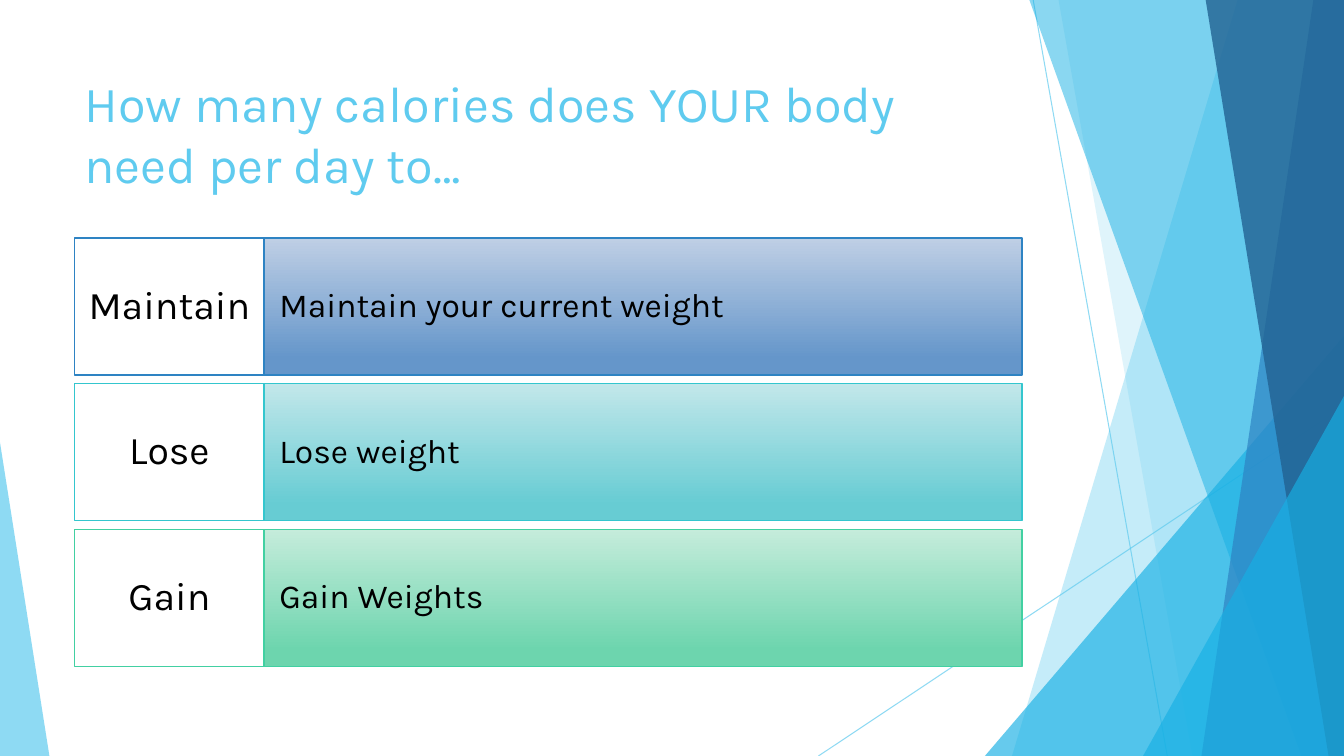
from dataclasses import dataclass
from typing import Any, Optional, Union

from lxml import etree
from pptx import Presentation
from pptx import util as u
from pptx.dml import color
from pptx.enum import shapes, text
from pptx.oxml import ns

WIDTH, HEIGHT = 960, 540
BAND_TOP = -0.6
FONT = "Karla"
SKY, CYAN = "5FCBEF", "17B0E4"

# Table-like block of rows
ROW_TOP, ROW_PITCH, ROW_HEIGHT = 169.9, 104.1, 98
LABEL_LEFT, LABEL_WIDTH, BAR_WIDTH = 53.3, 135.4, 541.4


@dataclass
class Ray:
    start: tuple[float, float]
    end: tuple[float, float]


@dataclass
class Band:
    """Runs from a slanted left edge to the right side of the slide."""
    top_left: float
    bottom_left: float
    fill: str
    opacity: int


@dataclass
class Peak:
    """Right-angled triangle standing on the bottom of the slide."""
    left: float
    width: float
    height: float
    apex: float
    fill: str
    opacity: int


@dataclass
class Goal:
    label: str
    description: str
    line: str
    light: str
    dark: str


RAYS = [Ray((738, 0), (833.8, HEIGHT)), Ray((WIDTH, 290.2), (584.6, HEIGHT))]

FACETS: list[Union[Band, Peak]] = [
    Band(884.2, 722.9, SKY, 36),
    Band(756, 851.8, SKY, 20),
    Peak(703.5, 256.5, 300.2, 1, CYAN, 66),
    Band(735.1, 929.5, CYAN, 50),
    Band(938.2, 858.2, "2E83C3", 70),
    Band(861.1, 949, "226292", 80),
    Peak(816.5, 143.5, 257, 1, CYAN, 66),
    Peak(0, 35.3, 223.9, 0, SKY, 70),
]

GOALS = [
    Goal("Maintain", "Maintain your current weight", "2E83C3", "BFCFE5", "6596CA"),
    Goal("Lose", "Lose weight", "34C6CE", "C2E7EA", "67CCD3"),
    Goal("Gain", "Gain Weights", "42D0A2", "C5ECDB", "6DD5AE"),
]


def rgb(value: str) -> color.RGBColor:
    return color.RGBColor.from_string(value)


def apply(target: Any, values: dict[str, Any]) -> None:
    for name, value in values.items():
        setattr(target, name, value)


def set_opacity(shape: Any, percent: int) -> None:
    for node in shape.element.spPr.iter(ns.qn("a:srgbClr")):
        etree.SubElement(node, ns.qn("a:alpha")).set("val", str(percent * 1000))


def draw_ray(slide: Any, ray: Ray) -> None:
    points = [u.Pt(value) for value in (*ray.start, *ray.end)]
    connector = slide.shapes.add_connector(shapes.MSO_CONNECTOR.STRAIGHT, *points)
    connector.line.color.rgb = rgb(SKY)
    connector.line.width = u.Pt(0.75)
    set_opacity(connector, 70)
    etree.SubElement(connector.element.spPr, ns.qn("a:effectLst"))


def draw_facet(slide: Any, facet: Union[Band, Peak]) -> None:
    if isinstance(facet, Band):
        corners = [(facet.top_left, BAND_TOP), (WIDTH, BAND_TOP),
                   (WIDTH, HEIGHT), (facet.bottom_left, HEIGHT)]
        points = [(u.Pt(x), u.Pt(y)) for x, y in corners]
        builder = slide.shapes.build_freeform(*points[0])
        builder.add_line_segments(points[1:], close=True)
        shape = builder.convert_to_shape()
    else:
        shape = slide.shapes.add_shape(
            shapes.MSO_SHAPE.ISOSCELES_TRIANGLE,
            u.Pt(facet.left), u.Pt(HEIGHT - facet.height),
            u.Pt(facet.width), u.Pt(facet.height))
        shape.adjustments[0] = facet.apex
    shape.shadow.inherit = False
    shape.fill.solid()
    shape.fill.fore_color.rgb = rgb(facet.fill)
    set_opacity(shape, facet.opacity)
    shape.line.fill.background()


def write(shape: Any, wording: str, size: float, ink: str,
          frame_format: dict[str, Any], paragraph_format: dict[str, Any]) -> None:
    frame = shape.text_frame
    apply(frame, {"word_wrap": True, **frame_format})
    paragraph = frame.paragraphs[0]
    apply(paragraph, paragraph_format)
    run = paragraph.add_run()
    run.text = wording
    apply(run.font, {"name": FONT, "size": u.Pt(size)})
    run.font.color.rgb = rgb(ink)


def draw_cell(slide: Any, left: float, top: float, width: float, line: str,
              wording: str, size: float, align: Any, inset: tuple[float, float],
              gradient: Optional[tuple[str, str]] = None) -> None:
    shape = slide.shapes.add_shape(
        shapes.MSO_SHAPE.RECTANGLE,
        u.Pt(left), u.Pt(top), u.Pt(width), u.Pt(ROW_HEIGHT))
    shape.shadow.inherit = False
    if gradient:
        shape.fill.gradient()
        shape.fill.gradient_angle = 270
        for stop, position, tone in zip(shape.fill.gradient_stops, (0, 0.88), gradient):
            stop.position = position
            stop.color.rgb = rgb(tone)
    else:
        shape.fill.solid()
        shape.fill.fore_color.rgb = rgb("FFFFFF")
    shape.line.color.rgb = rgb(line)
    shape.line.width = u.Pt(1)
    side, vertical = (u.Pt(value) for value in inset)
    write(shape, wording, size, "000000",
          {"vertical_anchor": text.MSO_ANCHOR.MIDDLE,
           "margin_left": side, "margin_right": side,
           "margin_top": vertical, "margin_bottom": vertical},
          {"alignment": align, "line_spacing": 0.9, "space_after": u.Pt(size * 0.35)})


def draw_goal(slide: Any, index: int, goal: Goal) -> None:
    top = ROW_TOP + index * ROW_PITCH
    draw_cell(slide, LABEL_LEFT + LABEL_WIDTH, top, BAR_WIDTH, goal.line,
              goal.description, 24, text.PP_ALIGN.LEFT, (10.8, 25.2),
              (goal.light, goal.dark))
    draw_cell(slide, LABEL_LEFT, top, LABEL_WIDTH, goal.line,
              goal.label, 28, text.PP_ALIGN.CENTER, (7.2, 9.4))


def main() -> None:
    presentation = Presentation()
    apply(presentation, {"slide_width": u.Pt(WIDTH), "slide_height": u.Pt(HEIGHT)})
    slide = presentation.slides.add_slide(presentation.slide_layouts[6])

    # Background facets
    for ray in RAYS:
        draw_ray(slide, ray)
    for facet in FACETS:
        draw_facet(slide, facet)

    # Title
    title = slide.shapes.add_textbox(u.Pt(53.3), u.Pt(48.2), u.Pt(676.8), u.Pt(103.7))
    write(title, "How many calories does YOUR body need per day to…", 36, SKY,
          {"vertical_anchor": text.MSO_ANCHOR.TOP},
          {"alignment": text.PP_ALIGN.LEFT})

    # Goals
    for index, goal in enumerate(GOALS):
        draw_goal(slide, index, goal)

    presentation.save("out.pptx")


if __name__ == "__main__":
    main()
